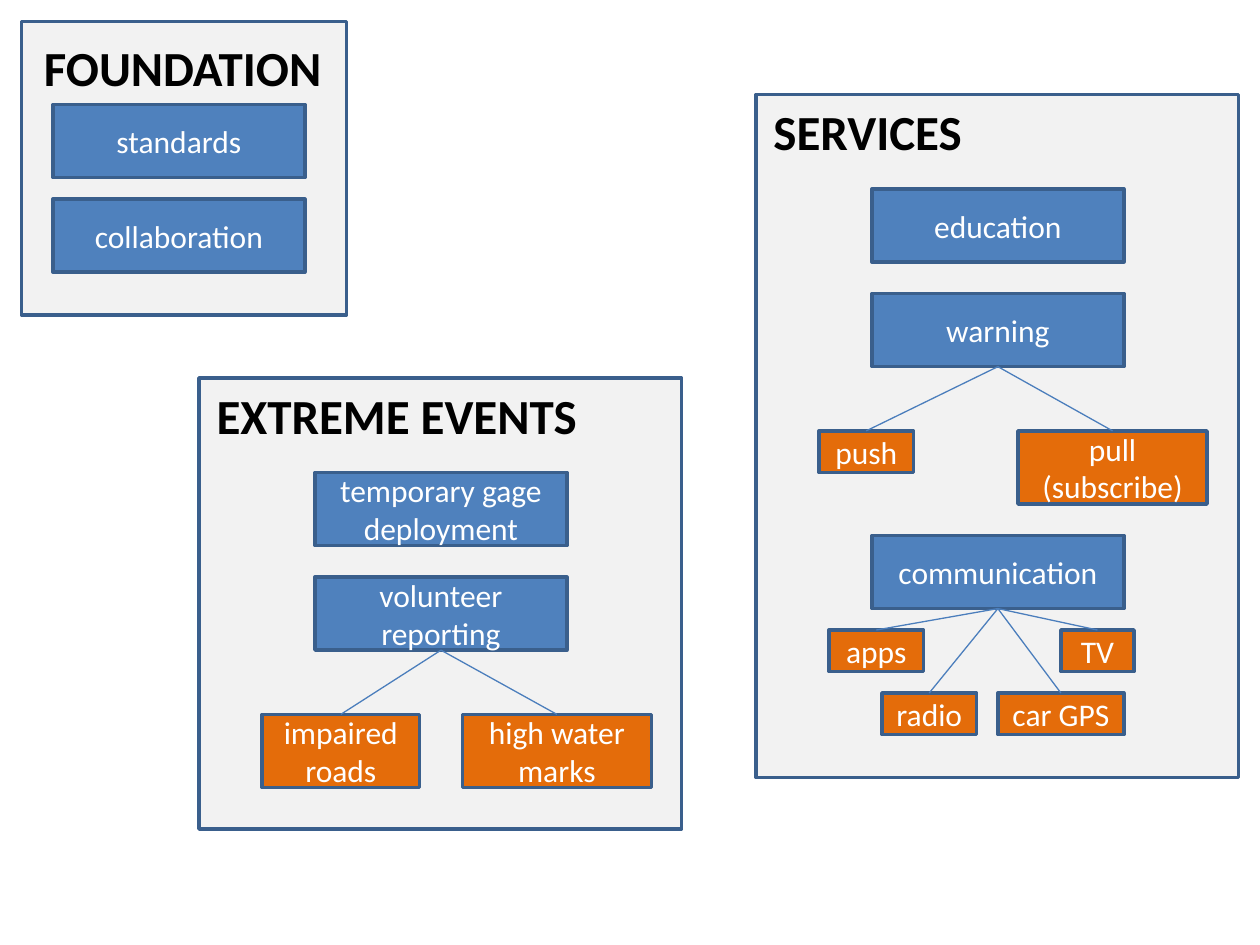
from pptx import Presentation
from pptx.dml.color import RGBColor
from pptx.enum.shapes import MSO_CONNECTOR, MSO_SHAPE
from pptx.enum.text import MSO_ANCHOR, MSO_AUTO_SIZE, PP_ALIGN
from pptx.oxml.ns import qn
from pptx.util import Inches, Pt
from lxml.etree import SubElement

PANEL_FILL, TOPIC_FILL, DETAIL_FILL = "F2F2F2", "4F81BD", "E46C0A"
BORDER, LINK, WHITE, BLACK = "3A5F8C", "4B7EBC", "FFFFFF", "000000"
TOPIC_WIDTH, TALL, SHORT = 2, 0.58, 0.33

# Topics: (label, top, details); details: (label, left, top, width, height)
PANELS = [
    {
        "title": "SERVICES", "box": (6, 0.75, 3.83, 5.42),
        "title_box": (6.04, 0.76, 1.71, 0.57), "topic_left": 6.92,
        "topics": [
            ("education", 1.5, []),
            ("warning", 2.33, [
                ("push", 6.5, 3.42, 0.75, SHORT),
                ("pull\n(subscribe)", 8.08, 3.42, 1.5, TALL),
            ]),
            ("communication", 4.25, [
                ("apps", 6.58, 5, 0.75, SHORT),
                ("TV", 8.42, 5, 0.58, SHORT),
                ("radio", 7, 5.5, 0.75, SHORT),
                ("car GPS", 7.92, 5.5, 1, SHORT),
            ]),
        ],
    },
    {
        "title": "FOUNDATION", "box": (0.17, 0.17, 2.58, 2.33),
        "title_box": (0.25, 0.25, 2.43, 0.57), "topic_left": 0.42,
        "topics": [("standards", 0.83, []), ("collaboration", 1.58, [])],
    },
    {
        "title": "EXTREME EVENTS", "box": (1.58, 3, 3.83, 3.58),
        "title_box": (1.62, 3.01, 3.09, 0.57), "topic_left": 2.5,
        "topics": [
            ("temporary gage deployment", 3.75, []),
            ("volunteer reporting", 4.58, [
                ("impaired roads", 2.08, 5.67, 1.25, TALL),
                ("high water marks", 3.67, 5.67, 1.5, TALL),
            ]),
        ],
    },
]
LABEL_FONT = {"name": "Calibri", "size": Pt(18)}
TITLE_FONT = {"name": "Calibri", "size": Pt(28), "bold": True}


def rgb(color):
    return RGBColor.from_string(color)


def write(frame, text, font_format, color, align):
    frame.text = text
    for paragraph in frame.paragraphs:
        paragraph.alignment = align
        for run in paragraph.runs:
            for attribute, value in font_format.items():
                setattr(run.font, attribute, value)
            run.font.color.rgb = rgb(color)


def add_box(shapes, box, fill, label=""):
    rectangle = shapes.add_shape(MSO_SHAPE.RECTANGLE, *map(Inches, box))
    rectangle.shadow.inherit = False
    rectangle.fill.solid()
    rectangle.fill.fore_color.rgb = rgb(fill)
    rectangle.line.color.rgb = rgb(BORDER)
    rectangle.line.width = Pt(2)
    if label:
        rectangle.text_frame.vertical_anchor = MSO_ANCHOR.MIDDLE
        write(rectangle.text_frame, label, LABEL_FONT, WHITE, PP_ALIGN.CENTER)
    return rectangle


def add_title(shapes, box, title):
    frame = shapes.add_textbox(*map(Inches, box)).text_frame
    frame.word_wrap = False
    frame.auto_size = MSO_AUTO_SIZE.SHAPE_TO_FIT_TEXT
    write(frame, title, TITLE_FONT, BLACK, PP_ALIGN.LEFT)


def link(shapes, topic, detail):
    """Join the bottom of a topic to the top of one of its details."""
    connector = shapes.add_connector(MSO_CONNECTOR.STRAIGHT, 0, 0, 0, 0)
    connector.begin_connect(topic, 2)
    connector.end_connect(detail, 0)
    connector.line.color.rgb = rgb(LINK)
    connector.line.width = Pt(0.75)
    SubElement(connector._element.spPr, qn("a:effectLst"))


def add_panel(shapes, panel):
    add_box(shapes, panel["box"], PANEL_FILL)
    add_title(shapes, panel["title_box"], panel["title"])
    for label, top, details in panel["topics"]:
        topic_box = (panel["topic_left"], top, TOPIC_WIDTH, TALL)
        topic = add_box(shapes, topic_box, TOPIC_FILL, label)
        for detail_label, *detail_box in details:
            link(shapes, topic, add_box(shapes, detail_box, DETAIL_FILL, detail_label))


def main():
    deck = Presentation()
    deck.slide_width, deck.slide_height = Inches(10), Inches(7.5)
    slide = deck.slides.add_slide(deck.slide_layouts[6])
    for panel in PANELS:
        add_panel(slide.shapes, panel)
    deck.save("out.pptx")


if __name__ == "__main__":
    main()
